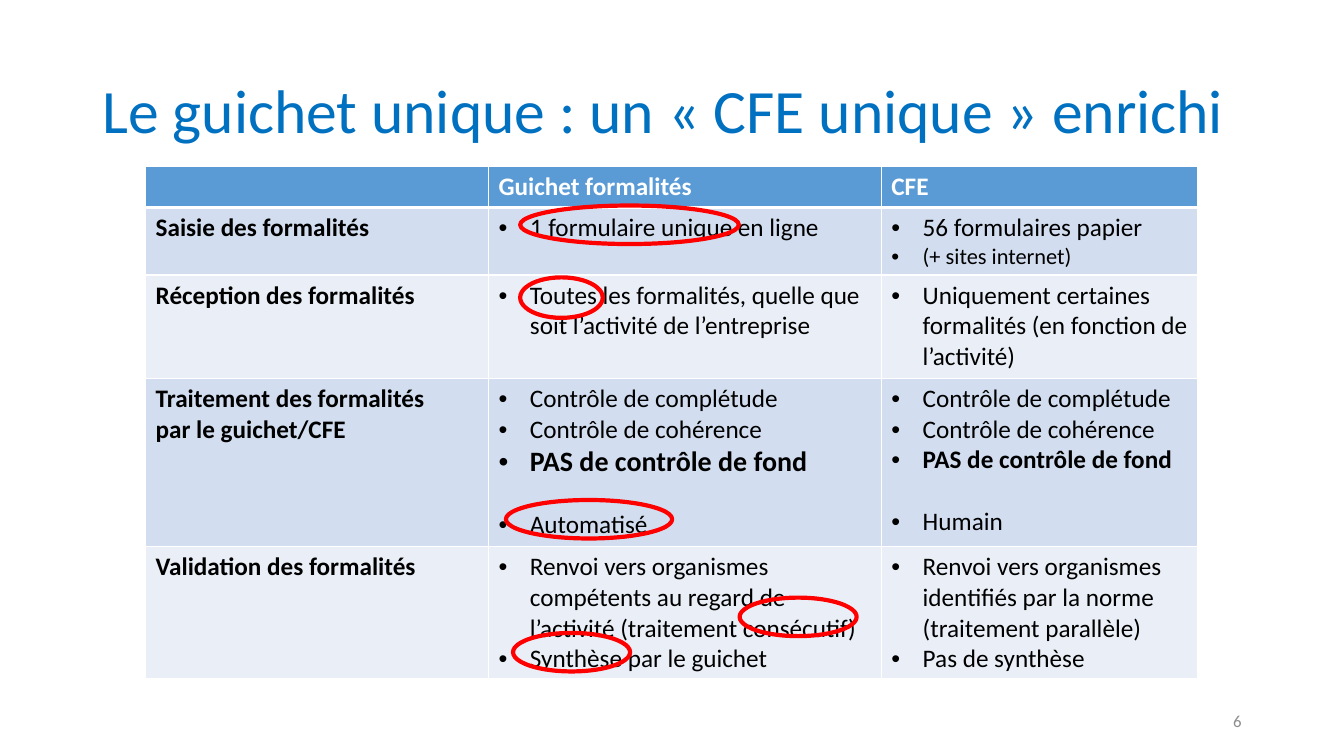
from lxml import etree
from pptx import Presentation
from pptx import util as u
from pptx.dml.color import RGBColor
from pptx.enum import shapes, text
from pptx.oxml import ns

BLUE = RGBColor(0x00, 0x70, 0xC0)
GREY = RGBColor(0x8C, 0x8C, 0x8C)
HEADER = RGBColor(0x5B, 0x9B, 0xD5)
BANDS = [RGBColor(0xEA, 0xEF, 0xF7), RGBColor(0xD2, 0xDE, 0xEF)]
WHITE = RGBColor(0xFF, 0xFF, 0xFF)
BLACK = RGBColor(0x00, 0x00, 0x00)
RED = RGBColor(0xFF, 0x00, 0x00)

prs = Presentation()
prs.slide_width, prs.slide_height = u.Cm(33.87), u.Cm(19.05)
s = prs.slides.add_slide(prs.slide_layouts[6])


def format_text(p, size, color, bold=False):
    for r in p.runs:
        r.font.name = "Calibri"
        r.font.size = u.Pt(size)
        r.font.bold = bold
        r.font.color.rgb = color


def add_border(cell, side, width):
    ln = etree.SubElement(cell._tc.get_or_add_tcPr(), ns.qn("a:ln" + side), w=str(u.Pt(width)))
    fill = etree.SubElement(ln, ns.qn("a:solidFill"))
    etree.SubElement(fill, ns.qn("a:srgbClr"), val=str(WHITE))


# Title and slide number
labels = [
    ("Le guichet unique : un «\u00a0CFE unique\u00a0» enrichi".replace("\u00a0", " "),
     (2.33, 1.01, 29.21, 3.68), 44, BLUE, text.PP_ALIGN.LEFT, 0.9),
    ("6", (23.92, 17.66, 7.62, 1.01), 12, GREY, text.PP_ALIGN.RIGHT, 1.0),
]
for words, box, size, color, align, spacing in labels:
    tf = s.shapes.add_textbox(*[u.Cm(v) for v in box]).text_frame
    tf.word_wrap = True
    tf.vertical_anchor = text.MSO_ANCHOR.MIDDLE
    tf.text = words
    p = tf.paragraphs[0]
    p.alignment, p.line_spacing = align, spacing
    format_text(p, size, color)

# Comparison table: one list of paragraphs per cell
rows = [
    [[], ["Guichet formalités"], ["CFE"]],
    [["Saisie des formalités"],
     ["1 formulaire unique en ligne"],
     ["56 formulaires papier", "(+ sites internet)"]],
    [["Réception des formalités"],
     ["Toutes les formalités, quelle que soit l’activité de l’entreprise"],
     ["Uniquement certaines formalités (en fonction de l’activité)"]],
    [["Traitement des formalités", "par le guichet/CFE"],
     ["Contrôle de complétude", "Contrôle de cohérence", "PAS de contrôle de fond", "Automatisé"],
     ["Contrôle de complétude", "Contrôle de cohérence", "PAS de contrôle de fond", "Humain"]],
    [["Validation des formalités"],
     ["Renvoi vers organismes compétents au regard de l’activité (traitement consécutif)",
      "Synthèse par le guichet"],
     ["Renvoi vers organismes identifiés par la norme (traitement parallèle)",
      "Pas de synthèse"]],
]
widths = [8.64, 9.9, 7.98]
heights = [1.03, 1.7, 2.6, 4.24, 3.33]
table = s.shapes.add_table(len(rows), len(widths), u.Cm(3.67), u.Cm(4.2),
                           u.Cm(sum(widths)), u.Cm(sum(heights))).table
for column, width in zip(table.columns, widths):
    column.width = u.Cm(width)

for i, row in enumerate(rows):
    table.rows[i].height = u.Cm(heights[i])
    for j, lines in enumerate(row):
        cell = table.cell(i, j)
        for side in "LRTB":
            add_border(cell, side, 3 if (i, side) in [(0, "B"), (1, "T")] else 1)
        cell.fill.solid()
        cell.fill.fore_color.rgb = BANDS[i % 2] if i else HEADER
        cell.text_frame.text = "\n".join(lines)
        for p, line in zip(cell.text_frame.paragraphs, lines):
            size = 18
            if line.startswith("(+"):
                size = 16
            elif line.startswith("PAS") and j == 1:
                size = 20
            bold = i == 0 or j == 0 or line.startswith("PAS")
            format_text(p, size, BLACK if i else WHITE, bold)
            if line in ("Automatisé", "Humain"):
                p.space_before = u.Pt(22)
            if i and j:
                pPr = p._p.get_or_add_pPr()
                pPr.set("marL", str(u.Cm(0.79)))
                pPr.set("indent", str(-u.Cm(0.79)))
                etree.SubElement(pPr, ns.qn("a:buFont"), typeface="Arial")
                etree.SubElement(pPr, ns.qn("a:buChar"), char="•")

# Red rings around the key words
rings = [
    (13.11, 6.99, 2.08, 1.02),   # Toutes
    (12.75, 12.6, 4.19, 0.97),   # Automatisé
    (18.64, 15.06, 2.95, 0.97),  # consécutif
    (12.93, 15.95, 2.95, 0.97),  # Synthèse
    (13.11, 5.18, 5.51, 0.97),   # 1 formulaire unique
]
for box in rings:
    sp = s.shapes.add_shape(shapes.MSO_SHAPE.OVAL, *[u.Cm(v) for v in box])
    sp.shadow.inherit = False
    sp.fill.background()
    sp.line.color.rgb = RED
    sp.line.width = u.Pt(3)

prs.save("out.pptx")
